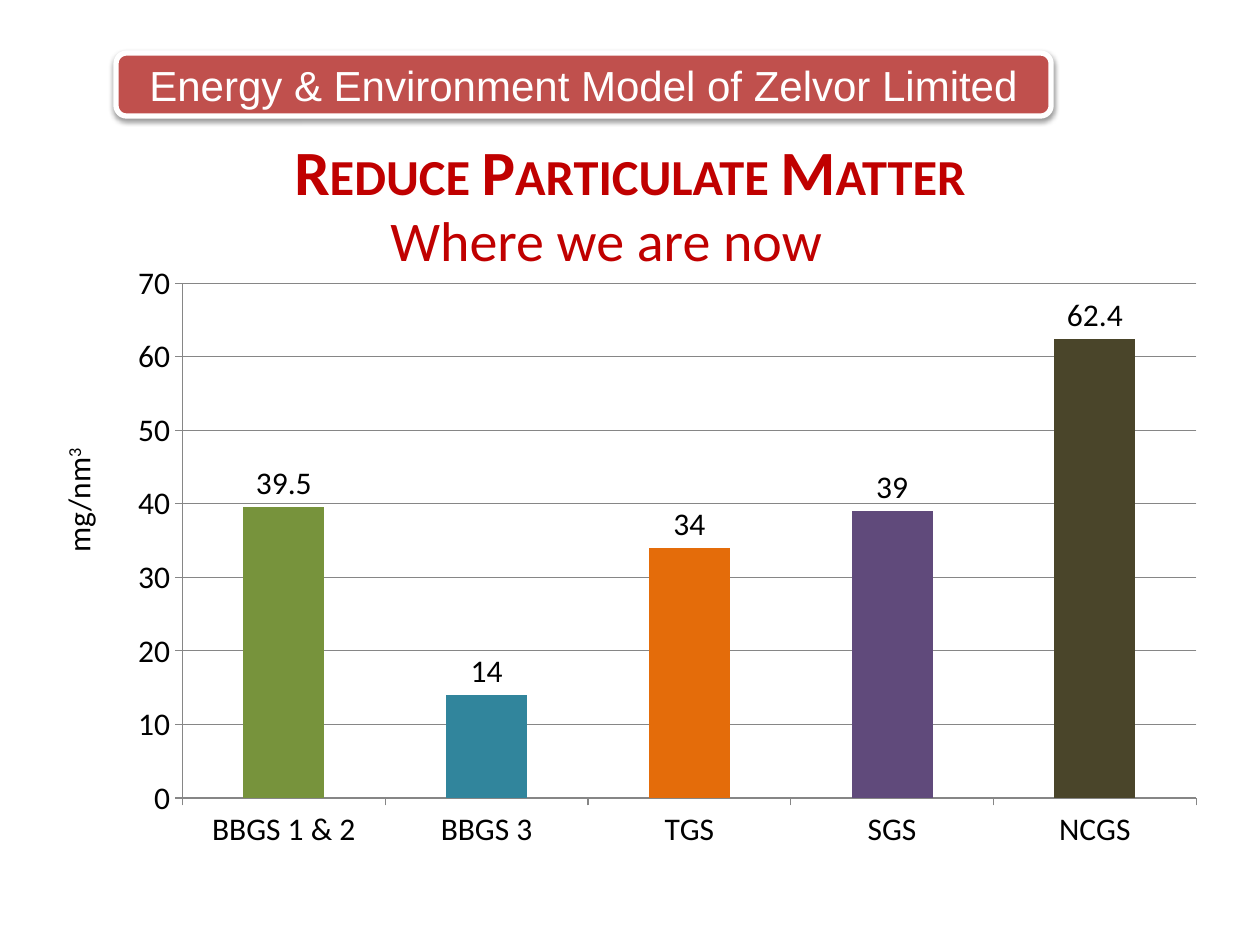
from lxml.etree import SubElement
from pptx import Presentation
from pptx.chart.data import CategoryChartData
from pptx.dml.color import RGBColor
from pptx.enum.chart import XL_CHART_TYPE as ChartType, XL_LABEL_POSITION as LabelPosition
from pptx.enum.chart import XL_TICK_MARK as TickMark
from pptx.enum.shapes import MSO_SHAPE as Shape
from pptx.enum.text import MSO_ANCHOR as Anchor, PP_ALIGN as Align
from pptx.oxml.ns import qn
from pptx.util import Cm, Pt

COLORS = {
    "banner": "C0504D", "white": "FFFFFF", "heading": "C00000",
    "text": "000000", "grid": "868686",
}
STATIONS = [
    ("BBGS 1 & 2", 39.5, "77933C"),
    ("BBGS 3", 14, "31859C"),
    ("TGS", 34, "E46C0A"),
    ("SGS", 39, "604A7B"),
    ("NCGS", 62.4, "4A452A"),
]


def rgb(name):
    return RGBColor.from_string(COLORS[name])


def style(font, size, color, face="Calibri"):
    font.name, font.size = face, Pt(size)
    font.color.rgb = rgb(color)


deck = Presentation()
deck.slide_width, deck.slide_height = Cm(25.4), Cm(19.05)
slide = deck.slides.add_slide(deck.slide_layouts[6])
shapes = slide.shapes

# Banner with a soft shadow below
banner = shapes.add_shape(Shape.ROUNDED_RECTANGLE, Cm(2.34), Cm(1.07), Cm(18.85), Cm(1.27))
banner.shadow.inherit = False
banner.fill.solid()
banner.fill.fore_color.rgb = rgb("banner")
banner.line.color.rgb = rgb("white")
banner.line.width = Pt(3)
effects = banner._element.spPr.find(qn("a:effectLst"))
shadow = SubElement(effects, qn("a:outerShdw"), blurRad=str(Pt(3.1)), dist=str(Pt(1.6)),
                    dir="5400000", rotWithShape="0")
shadow_color = SubElement(shadow, qn("a:srgbClr"), val=COLORS["text"])
SubElement(shadow_color, qn("a:alpha"), val="38000")
banner.text_frame.text = "Energy & Environment Model of Zelvor Limited"
banner.text_frame.vertical_anchor = Anchor.MIDDLE
banner_line = banner.text_frame.paragraphs[0]
banner_line.alignment = Align.CENTER
style(banner_line.runs[0].font, 24, "white", "Arial")

# Heading in small capitals
heading = shapes.add_textbox(Cm(1.27), Cm(2.54), Cm(22.86), Cm(1.47)).text_frame
heading.word_wrap = True
heading.text = "Reduce Particulate Matter"
heading_line = heading.paragraphs[0]
heading_line.alignment = Align.CENTER
heading_run = heading_line.runs[0]
style(heading_run.font, 36, "heading")
heading_run.font.bold = True
heading_run._r.get_or_add_rPr().set("cap", "small")

# Subheading
subheading = shapes.add_textbox(Cm(7.62), Cm(4.01), Cm(9.3), Cm(1.63)).text_frame
subheading.text = "Where we are now"
style(subheading.paragraphs[0].runs[0].font, 32, "heading")

# Column chart, one colour per station
emissions = CategoryChartData()
emissions.categories = [name for name, _, _ in STATIONS]
emissions.add_series("Series 1", [value for _, value, _ in STATIONS])
chart = shapes.add_chart(ChartType.COLUMN_CLUSTERED, Cm(2.34), Cm(5.08),
                         Cm(22.22), Cm(12.27), emissions).chart
chart.has_legend = False
chart.has_title = False
style(chart.font, 18, "text")

plot = chart.plots[0]
plot.gap_width = 150
plot.vary_by_categories = False
plot.has_data_labels = True
plot.data_labels.show_value = True
plot.data_labels.position = LabelPosition.OUTSIDE_END
for index, (_, _, color) in enumerate(STATIONS):
    column_fill = plot.series[0].points[index].format.fill
    column_fill.solid()
    column_fill.fore_color.rgb = RGBColor.from_string(color)

for axis in (chart.category_axis, chart.value_axis):
    axis.major_tick_mark = TickMark.OUTSIDE
    axis.minor_tick_mark = TickMark.NONE
    axis.format.line.color.rgb = rgb("grid")
scale = chart.value_axis
scale.minimum_scale, scale.maximum_scale, scale.major_unit = 0, 70, 10
scale.has_major_gridlines = True
scale.major_gridlines.format.line.color.rgb = rgb("grid")

# Unit beside the value axis
unit_box = shapes.add_textbox(Cm(0.23), Cm(9.53), Cm(2.69), Cm(1.02))
unit_box.rotation = 270
unit = unit_box.text_frame.paragraphs[0]
for part in ("mg/nm", "3"):
    run = unit.add_run()
    run.text = part
    style(run.font, 18, "text")
run._r.get_or_add_rPr().set("baseline", "30000")

deck.save("out.pptx")
